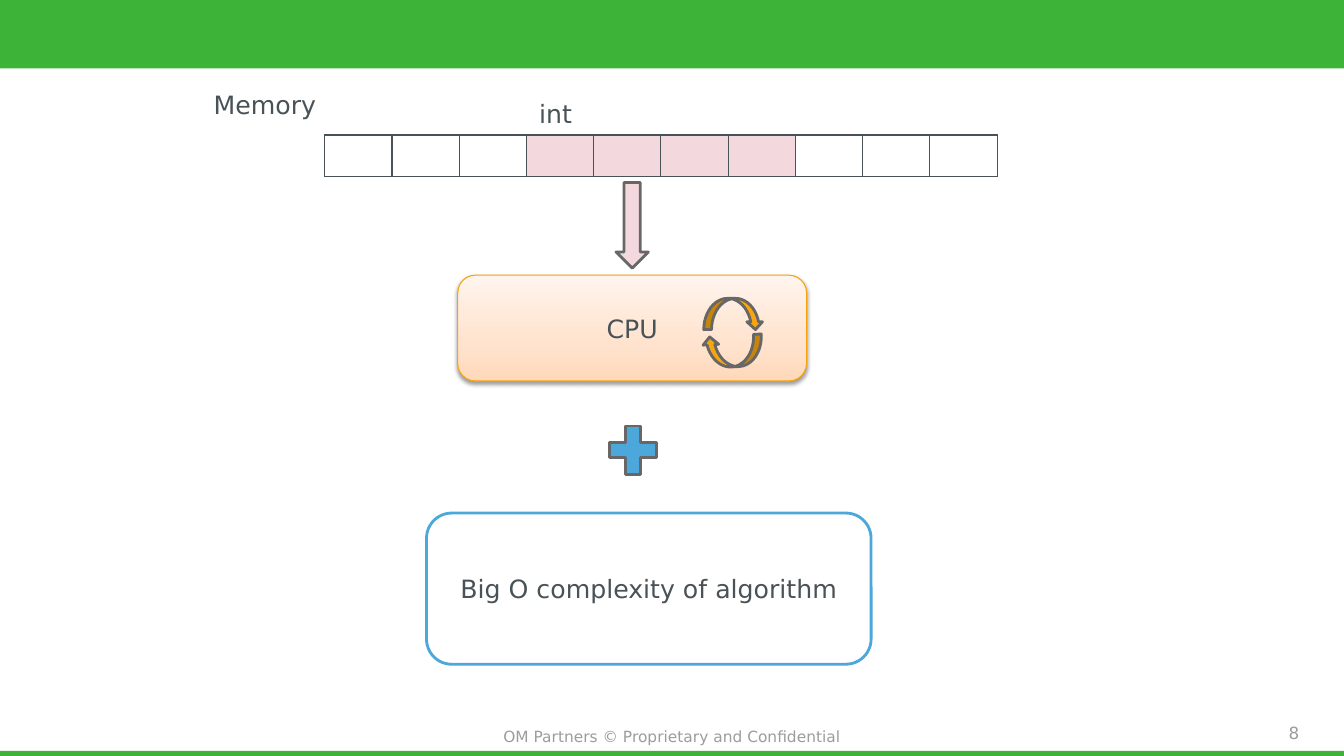
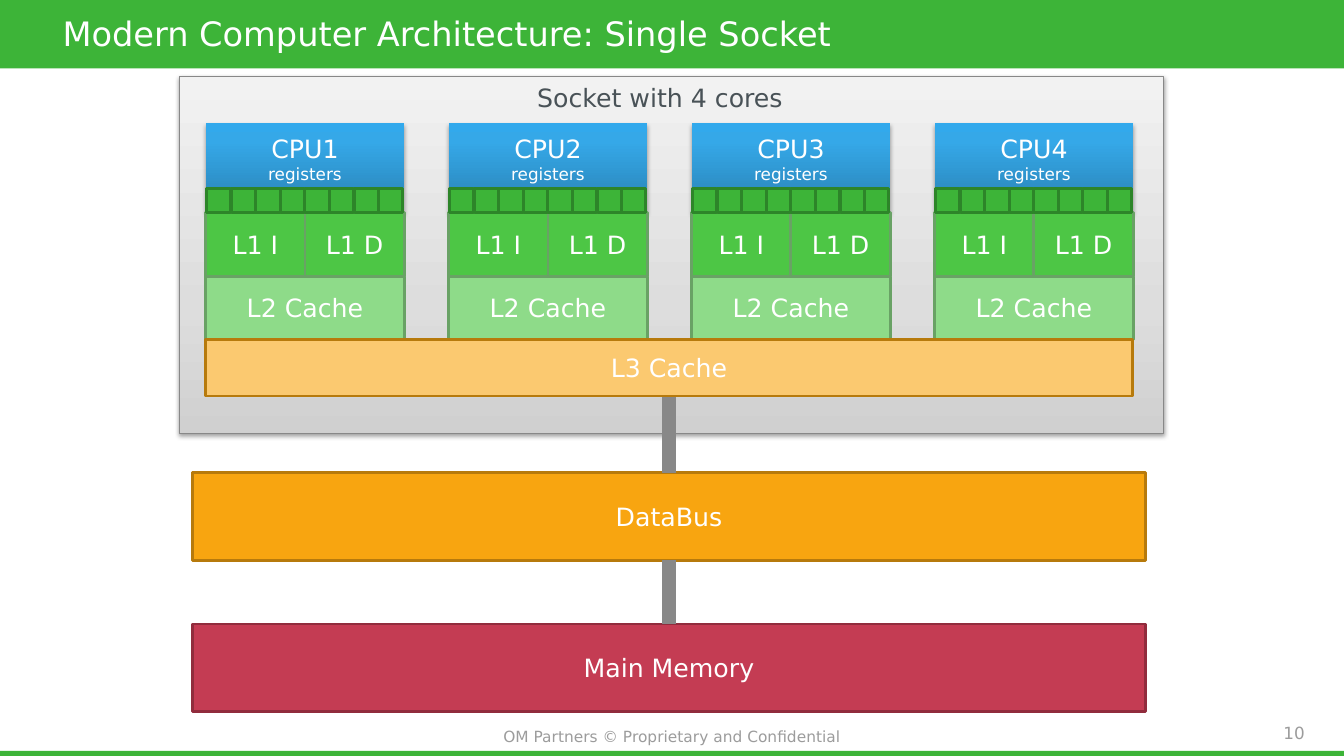
"""Build two slides on computer architecture: a memory and CPU model, and a single socket."""
import dataclasses

import lxml.etree
import pptx
import pptx.dml.color
import pptx.enum.shapes
import pptx.enum.text
import pptx.oxml.ns
import pptx.util

Inches = pptx.util.Inches
Pt = pptx.util.Pt
Kind = pptx.enum.shapes.MSO_SHAPE
Align = pptx.enum.text.PP_ALIGN
Anchor = pptx.enum.text.MSO_ANCHOR
qn = pptx.oxml.ns.qn


@dataclasses.dataclass(frozen=True)
class Theme:
    font: str = "DejaVu Sans"
    title_size: float = 24
    text_size: float = 18
    small_size: float = 12
    footer_size: float = 11
    green: str = "3DB438"
    green_edge: str = "2D8529"
    l1: str = "4DC645"
    l2: str = "8EDB89"
    cache_edge: str = "69A265"
    l3: str = "FBC970"
    orange: str = "F8A510"
    orange_edge: str = "B77A0C"
    cpu_edge: str = "F8A30A"
    red: str = "C43C53"
    red_edge: str = "912C3D"
    pink: str = "F3D8DD"
    blue: str = "4CA7DA"
    white: str = "FFFFFF"
    ink: str = "495257"
    muted: str = "9C9C9C"
    grey: str = "888888"
    icon_edge: str = "676767"
    peach: tuple = ((0, "FFD8B9"), (35, "FFE3CE"), (100, "FFF4ED"))
    silver: tuple = ((0, "D0D0D0"), (35, "DDDDDD"), (100, "F2F2F2"))
    azure: tuple = ((0, "2981B3"), (80, "35A8E8"), (100, "32A9EC"))


THEME = Theme()
SLIDE_SIZE = (13.33, 7.5)
FOOTER = "OM Partners © Proprietary and Confidential"
BANDS = [(0, 0, 13.33, 0.68), (0, 7.45, 13.33, 0.07)]

MEMORY_CELLS = 10
INT_CELLS = range(3, 7)
MODEL_LABELS = [("Memory", (2.02, 0.84, 1.22, 0.4)), ("int", (5.25, 0.93, 0.53, 0.4))]
MODEL_ICONS = [
    (Kind.CURVED_DOWN_ARROW, (6.98, 2.96, 0.59, 0.31), 0, THEME.orange),
    (Kind.CURVED_DOWN_ARROW, (6.97, 3.33, 0.59, 0.31), 176.7, THEME.orange),
    (Kind.DOWN_ARROW, (6.11, 1.81, 0.32, 0.85), 0, THEME.pink),
    (Kind.MATH_PLUS, (5.96, 4.14, 0.64, 0.65), 0, THEME.blue),
]

SOCKET_TITLE = "Modern Computer Architecture: Single Socket"
SHARED_BLOCKS = [
    ("Main Memory", (1.91, 6.19, 9.45, 0.87), THEME.red, THEME.red_edge),
    ("DataBus", (1.91, 4.69, 9.45, 0.87), THEME.orange, THEME.orange_edge),
]
L3_BLOCK = ("L3 Cache", (2.04, 3.37, 9.19, 0.56), THEME.l3, THEME.orange_edge)
CORES = ["CPU1", "CPU2", "CPU3", "CPU4"]
CORE_LEFT, CORE_PITCH, CORE_WIDTH = 2.04, 2.41, 1.97
L1_CACHES = ["L1 I", "L1 D"]
REGISTERS, REGISTER_SIZE, REGISTER_INSET = 8, 0.24, 0.01
BUS_X = 6.64


def colour(value):
    return pptx.dml.color.RGBColor.from_string(value)


def lengths(box):
    return [Inches(value) for value in box]


def write(frame, lines, ink=THEME.ink, align=Align.CENTER, spacing=None):
    """Write (text, size) pairs as paragraphs of one frame."""
    for index, (text, size) in enumerate(lines):
        para = frame.add_paragraph() if index else frame.paragraphs[0]
        para.alignment = align
        if spacing:
            para.line_spacing = Pt(spacing)
        span = para.add_run()
        span.text = text
        span.font.name = THEME.font
        span.font.size = Pt(size)
        span.font.color.rgb = colour(ink)


def paint(shape, fill):
    """Fill with a colour, or with gradient stops running upwards."""
    if isinstance(fill, str):
        shape.fill.solid()
        shape.fill.fore_color.rgb = colour(fill)
        return
    shape.fill.gradient()
    shape.fill.gradient_angle = 90
    stops = shape.element.spPr.find(".//" + qn("a:gsLst"))
    for stop in list(stops):
        stops.remove(stop)
    for position, value in fill:
        stop = lxml.etree.SubElement(stops, qn("a:gs"), pos=str(position * 1000))
        lxml.etree.SubElement(stop, qn("a:srgbClr"), val=value)


def cast_shadow(shape, opacity, distance):
    effects = shape.element.spPr.find(qn("a:effectLst"))
    shadow = lxml.etree.SubElement(
        effects, qn("a:outerShdw"), blurRad=str(Pt(3.1)), dist=str(Pt(distance)),
        dir="5400000", rotWithShape="0")
    tint = lxml.etree.SubElement(shadow, qn("a:srgbClr"), val="000000")
    lxml.etree.SubElement(tint, qn("a:alpha"), val=str(opacity * 1000))


def add_block(shapes, box, fill, edge=None, weight=2, kind=Kind.RECTANGLE, lines=(), ink=THEME.white):
    shape = shapes.add_shape(kind, *lengths(box))
    shape.shadow.inherit = False
    paint(shape, fill)
    if edge:
        shape.line.color.rgb = colour(edge)
        shape.line.width = Pt(weight)
    else:
        shape.line.fill.background()
    shape.text_frame.vertical_anchor = Anchor.MIDDLE
    write(shape.text_frame, lines, ink)
    return shape


def add_label(shapes, box, text, size=THEME.text_size, ink=THEME.ink, align=Align.LEFT,
              wrap=True, anchor=Anchor.TOP, spacing=None):
    label = shapes.add_textbox(*lengths(box))
    label.text_frame.word_wrap = wrap
    label.text_frame.vertical_anchor = anchor
    write(label.text_frame, [(text, size)], ink, align, spacing)
    return label


def add_bus(shapes, top, bottom):
    bus = shapes.add_connector(
        pptx.enum.shapes.MSO_CONNECTOR.STRAIGHT, *lengths((BUS_X, top, BUS_X, bottom)))
    bus.line.color.rgb = colour(THEME.grey)
    bus.line.width = Pt(10)
    lxml.etree.SubElement(bus.element.spPr, qn("a:effectLst"))


def set_up_master(deck, layout, page):
    """Move the bands and the footer to the master and place the layout title."""
    parts = [add_block(page.shapes, box, THEME.green) for box in BANDS]
    parts.append(add_label(page.shapes, (0, 7.01, 13.33, 0.47), FOOTER, THEME.footer_size,
                           THEME.muted, Align.CENTER, anchor=Anchor.MIDDLE, spacing=22))
    for index, part in enumerate(parts):
        part.element.xpath(".//p:cNvPr")[0].set("id", str(100 + index))
        deck.slide_master.shapes.element.insert(2 + index, part.element)
    title = layout.placeholders[0]
    title.left, title.top, title.width, title.height = lengths((0.52, 0.08, 12.23, 0.75))


def finish_page(page, number, title=None):
    holder = page.shapes.title
    if title:
        holder.text_frame.vertical_anchor = Anchor.TOP
        write(holder.text_frame, [(title, THEME.title_size)], THEME.white, Align.LEFT)
    else:
        holder.element.getparent().remove(holder.element)
    label = add_label(page.shapes, (12.47, 6.98, 0.73, 0.47), str(number), THEME.small_size,
                      THEME.muted, Align.CENTER, anchor=Anchor.MIDDLE, spacing=22)
    frame = label.text_frame
    frame.margin_left = frame.margin_right = frame.margin_top = frame.margin_bottom = 0


def add_memory(shapes):
    table = shapes.add_table(1, MEMORY_CELLS, *lengths((3.22, 1.34, 6.67, 0.41))).table
    table.first_row = table.horz_banding = False
    for index, cell in enumerate(table.iter_cells()):
        properties = cell._tc.get_or_add_tcPr()
        for side in ("a:lnL", "a:lnR", "a:lnT", "a:lnB"):
            border = lxml.etree.SubElement(properties, qn(side), w=str(Pt(1)))
            fill = lxml.etree.SubElement(border, qn("a:solidFill"))
            lxml.etree.SubElement(fill, qn("a:srgbClr"), val=THEME.ink)
        cell.fill.solid()
        cell.fill.fore_color.rgb = colour(THEME.pink if index in INT_CELLS else THEME.white)


def add_core(shapes, name, left):
    core = shapes.add_group_shape().shapes
    cpu = add_block(core, (left, 1.22, CORE_WIDTH, 0.89), THEME.azure,
                    lines=[(name, THEME.text_size), ("registers", THEME.small_size)])
    cpu.text_frame.margin_bottom = Inches(0.24)
    cast_shadow(cpu, 35, 1.8)
    half = CORE_WIDTH / len(L1_CACHES)
    caches = [(text, (left + index * half, 2.11, half, 0.63), THEME.l1)
              for index, text in enumerate(L1_CACHES)]
    caches.append(("L2 Cache", (left, 2.74, CORE_WIDTH, 0.63), THEME.l2))
    for text, box, fill in caches:
        add_block(core, box, fill, THEME.cache_edge, lines=[(text, THEME.text_size)])
    pitch = (CORE_WIDTH - 2 * REGISTER_INSET) / REGISTERS
    for index in range(REGISTERS):
        box = (left + REGISTER_INSET + index * pitch, 1.87, REGISTER_SIZE, REGISTER_SIZE)
        add_block(core, box, THEME.green, THEME.green_edge)


def build_model(page):
    shapes = page.shapes
    add_memory(shapes)
    cpu = add_block(shapes, (4.54, 2.73, 3.46, 1.05), THEME.peach, THEME.cpu_edge, 0.75,
                    Kind.ROUNDED_RECTANGLE, [("CPU", THEME.text_size)], THEME.ink)
    cast_shadow(cpu, 38, 1.6)
    for text, box in MODEL_LABELS:
        add_label(shapes, box, text, wrap=False)
    for kind, box, rotation, fill in MODEL_ICONS:
        add_block(shapes, box, fill, THEME.icon_edge, kind=kind).rotation = rotation
    add_block(shapes, (4.23, 5.09, 4.41, 1.5), THEME.white, THEME.blue,
              kind=Kind.ROUNDED_RECTANGLE,
              lines=[("Big O complexity of algorithm", THEME.text_size)], ink=THEME.ink)


def build_socket(page):
    shapes = page.shapes
    for text, box, fill, edge in SHARED_BLOCKS:
        add_block(shapes, box, fill, edge, lines=[(text, THEME.text_size)])
    add_bus(shapes, 5.56, 6.19)
    socket = add_block(shapes, (1.78, 0.76, 9.76, 3.54), THEME.silver, THEME.grey, 0.75)
    cast_shadow(socket, 38, 1.6)
    add_label(shapes, (5.23, 0.77, 2.83, 0.4), "Socket with 4 cores")
    add_bus(shapes, 3.93, 4.69)
    for index, name in enumerate(CORES):
        add_core(shapes, name, CORE_LEFT + index * CORE_PITCH)
    text, box, fill, edge = L3_BLOCK
    add_block(shapes, box, fill, edge, lines=[(text, THEME.text_size)])


def main():
    deck = pptx.Presentation()
    deck.slide_width, deck.slide_height = lengths(SLIDE_SIZE)
    layout = deck.slide_layouts.get_by_name("Title Only")
    model, socket = [deck.slides.add_slide(layout) for _ in range(2)]
    set_up_master(deck, layout, model)
    finish_page(model, 8)
    build_model(model)
    finish_page(socket, 10, SOCKET_TITLE)
    build_socket(socket)
    deck.save("out.pptx")


if __name__ == "__main__":
    main()
